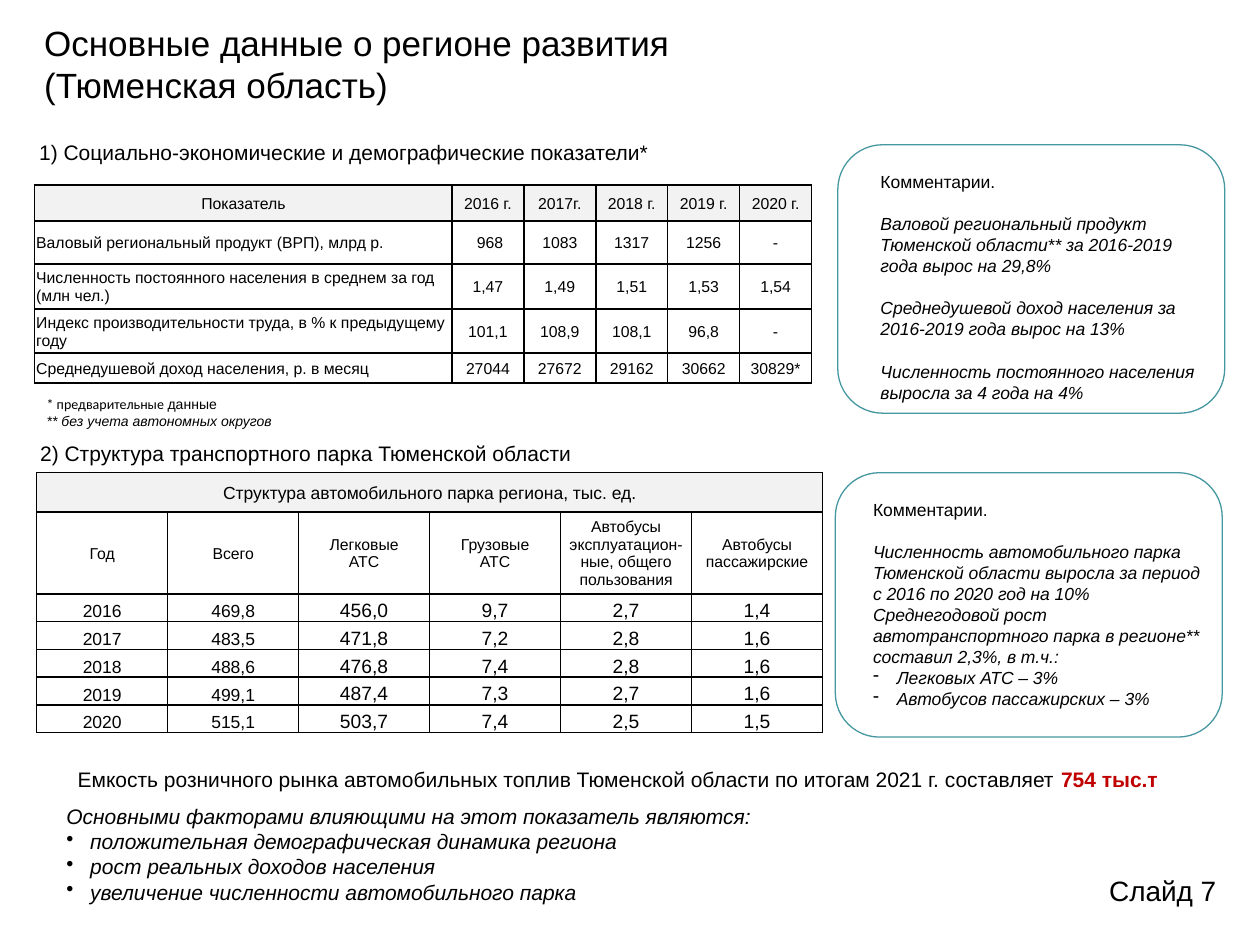
from dataclasses import dataclass
from typing import Optional

import lxml.etree
import pptx
import pptx.dml.color
import pptx.enum.shapes
import pptx.enum.text
import pptx.oxml.ns
import pptx.util

Cm, Pt = pptx.util.Cm, pptx.util.Pt
RGB = pptx.dml.color.RGBColor
Align = pptx.enum.text.PP_ALIGN
Anchor = pptx.enum.text.MSO_ANCHOR
qn = pptx.oxml.ns.qn


@dataclass(frozen=True)
class Theme:
    font: str = "Arial"
    note_font: str = "Calibri"
    ink: str = "000000"
    accent: str = "C00000"
    frame: str = "4597A0"
    header: str = "F2F2F2"
    title: float = 20
    page: float = 16
    heading: float = 12
    figure: float = 11
    body: float = 10
    cell: float = 9
    note: float = 8


@dataclass(frozen=True)
class Box:
    """Position and size in centimetres."""
    left: float
    top: float
    width: float
    height: float

    def emu(self) -> tuple:
        return Cm(self.left), Cm(self.top), Cm(self.width), Cm(self.height)


@dataclass(frozen=True)
class Line:
    text: str
    bullet: Optional[str] = None
    before: float = 0


@dataclass(frozen=True)
class Comment:
    frame: Box
    text: Box
    lines: tuple


T = Theme()
INDENT = 0.48

INDICATORS = (
    ("Показатель", "2016 г.", "2017г.", "2018 г.", "2019 г.", "2020 г."),
    ("Валовый региональный продукт (ВРП), млрд р.", " 968", "1083", "1317", "1256", "-"),
    ("Численность постоянного населения в среднем за год (млн чел.)",
     "1,47", "1,49", "1,51", "1,53", "1,54"),
    ("Индекс производительности труда, в % к предыдущему году",
     "101,1", "108,9", "108,1", "96,8", "-"),
    ("Среднедушевой доход населения, р. в месяц",
     "27044", "27672", "29162", "30662", "30829*"),
)
FLEET_TITLE = "Структура автомобильного парка региона, тыс. ед."
FLEET = (
    ("Год", "Всего", "Легковые\nАТС", "Грузовые\nАТС",
     "Автобусы эксплуатацион-ные, общего пользования", "Автобусы пассажирские"),
    ("2016", "469,8", "456,0", "9,7", "2,7", "1,4"),
    ("2017", "483,5", "471,8", "7,2", "2,8", "1,6"),
    ("2018", "488,6", "476,8", "7,4", "2,8", "1,6"),
    ("2019", "499,1", "487,4", "7,3", "2,7", "1,6"),
    ("2020", "515,1", "503,7", "7,4", "2,5", "1,5"),
)
COMMENTS = (
    Comment(Box(16.89, 2.92, 7.8, 5.41), Box(17.5, 3.33, 7.14, 4.95), (
        Line("Валовой региональный продукт Тюменской области** за 2016-2019 "
             "года вырос на 29,8%", before=12),
        Line("Среднедушевой доход населения за 2016-2019 года вырос на 13%", before=12),
        Line("Численность постоянного населения выросла за 4 года на 4%", before=12),
    )),
    Comment(Box(16.84, 9.53, 7.8, 5.33), Box(17.35, 9.93, 7.26, 4.52), (
        Line("Численность автомобильного парка Тюменской области выросла за период "
             "с 2016 по 2020 год на 10%", before=12),
        Line("Среднегодовой рост автотранспортного парка в регионе** "
             "составил 2,3%, в т.ч.:"),
        Line("Легковых АТС – 3%", "-"),
        Line("Автобусов пассажирских – 3%", "-"),
    )),
)
FACTORS = (
    Line("Основными факторами влияющими на этот показатель являются:", before=7),
    Line("положительная демографическая динамика региона", "•"),
    Line("рост реальных доходов населения", "•"),
    Line("увеличение численности автомобильного парка", "•"),
)


def write(tf, text: str, *, size: float, font: str = T.font, color: str = T.ink,
          bold: bool = False, italic: bool = False, align=Align.LEFT,
          bullet: Optional[str] = None, before: float = 0, join: bool = False) -> None:
    """Add a paragraph, or with join a run at the end of the last one."""
    p = tf.paragraphs[-1]
    if p.runs and not join:
        p = tf.add_paragraph()
    if not join:
        if bullet:
            pPr = p._p.get_or_add_pPr()
            pPr.set("marL", str(Cm(INDENT)))
            pPr.set("indent", str(-Cm(INDENT)))
            lxml.etree.SubElement(pPr, qn("a:buChar")).set("char", bullet)
        p.alignment = align
        if before:
            p.space_before = Pt(before)
    r = p.add_run()
    r.text = text
    r.font.size, r.font.name = Pt(size), font
    r.font.bold, r.font.italic = bold, italic
    r.font.color.rgb = RGB.from_string(color)


def write_lines(tf, lines: tuple, size: float) -> None:
    for line in lines:
        write(tf, line.text, size=size, italic=True, bullet=line.bullet, before=line.before)


def add_text_frame(s, box: Box, inset: Optional[float] = None):
    tf = s.shapes.add_textbox(*box.emu()).text_frame
    tf.word_wrap = True
    if inset is not None:
        tf.margin_left = tf.margin_right = tf.margin_top = tf.margin_bottom = Cm(inset)
    return tf


def add_comment(s, comment: Comment) -> None:
    sp = s.shapes.add_shape(pptx.enum.shapes.MSO_SHAPE.ROUNDED_RECTANGLE, *comment.frame.emu())
    sp.shadow.inherit = False
    sp.fill.background()
    sp.line.color.rgb = RGB.from_string(T.frame)
    sp.line.width = Pt(0.75)
    tf = add_text_frame(s, comment.text)
    write(tf, "Комментарии.", size=T.body)
    write_lines(tf, comment.lines, T.body)


def add_grid(s, left: float, top: float, cols: list, rows: list):
    table = s.shapes.add_table(len(rows), len(cols),
                               *Box(left, top, sum(cols), sum(rows)).emu()).table
    table.first_row = table.horz_banding = False
    for col, width in zip(table.columns, cols):
        col.width = Cm(width)
    for row, height in zip(table.rows, rows):
        row.height = Cm(height)
    for cell in table.iter_cells():
        tcPr = cell._tc.get_or_add_tcPr()
        for side in ("a:lnL", "a:lnR", "a:lnT", "a:lnB"):
            ln = lxml.etree.SubElement(tcPr, qn(side), w=str(Pt(1)))
            fill = lxml.etree.SubElement(ln, qn("a:solidFill"))
            lxml.etree.SubElement(fill, qn("a:srgbClr"), val=T.ink)
        cell.margin_left = cell.margin_right = cell.margin_top = Cm(0.03)
        cell.margin_bottom = 0
        cell.fill.background()
    return table


def fill_cell(cell, text: str, *, size: float, align=Align.CENTER,
              anchor=Anchor.MIDDLE, header: bool = False) -> None:
    cell.vertical_anchor = anchor
    if header:
        cell.fill.solid()
        cell.fill.fore_color.rgb = RGB.from_string(T.header)
    for line in text.split("\n"):
        write(cell.text_frame, line, size=size, align=align)


def add_indicators(s) -> None:
    table = add_grid(s, 0.7, 3.73, [8.41] + [1.45] * 5, [0.73, 0.86, 0.91, 0.89, 0.6])
    for i, row in enumerate(INDICATORS):
        for j, text in enumerate(row):
            align = Align.LEFT if i and not j else Align.CENTER
            fill_cell(table.cell(i, j), text, size=T.cell, align=align, header=i == 0)


def add_fleet(s) -> None:
    table = add_grid(s, 0.74, 9.53, [2.64] * 6, [0.79, 1.65] + [0.56] * 5)
    table.cell(0, 0).merge(table.cell(0, 5))
    fill_cell(table.cell(0, 0), FLEET_TITLE, size=T.body, header=True)
    for i, row in enumerate(FLEET):
        for j, text in enumerate(row):
            size = T.cell if i == 0 else T.body if j < 2 else T.figure
            fill_cell(table.cell(i + 1, j), text, size=size,
                      anchor=Anchor.BOTTOM if i else Anchor.MIDDLE)


def main() -> None:
    prs = pptx.Presentation()
    prs.slide_width, prs.slide_height = Cm(25.4), Cm(19.05)
    s = prs.slides.add_slide(prs.slide_layouts[6])

    tf = add_text_frame(s, Box(0.79, 0.33, 20.5, 1.8), 0.1)
    for text in ("Основные данные о регионе развития", "(Тюменская область)"):
        write(tf, text, size=T.title)
    write(add_text_frame(s, Box(0.69, 2.72, 21, 1.19), 0.1),
          "1) Социально-экономические и демографические показатели*", size=T.heading)
    write(add_text_frame(s, Box(0.71, 8.79, 21, 0.86), 0.1),
          "2) Структура транспортного парка Тюменской области", size=T.heading)
    add_fleet(s)
    for comment in COMMENTS:
        add_comment(s, comment)
    add_indicators(s)

    tf = add_text_frame(s, Box(0.69, 7.85, 12.7, 0.94))
    write(tf, "* предварительные ", size=T.note, font=T.note_font)
    write(tf, "данные", size=T.note, join=True)
    write(tf, "** без учета автономных округов", size=T.note, italic=True)

    tf = add_text_frame(s, Box(1.09, 15.32, 22.73, 3.07))
    write(tf, "Емкость розничного рынка автомобильных топлив Тюменской области "
          "по итогам 2021 г. составляет ", size=T.heading, align=Align.CENTER)
    write(tf, "754 тыс.т", size=T.heading, color=T.accent, bold=True, join=True)
    write_lines(tf, FACTORS, T.heading)

    write(add_text_frame(s, Box(21.82, 17.48, 2.95, 0.99)), "Слайд 7",
          size=T.page, align=Align.RIGHT)
    prs.save("out.pptx")


if __name__ == "__main__":
    main()
